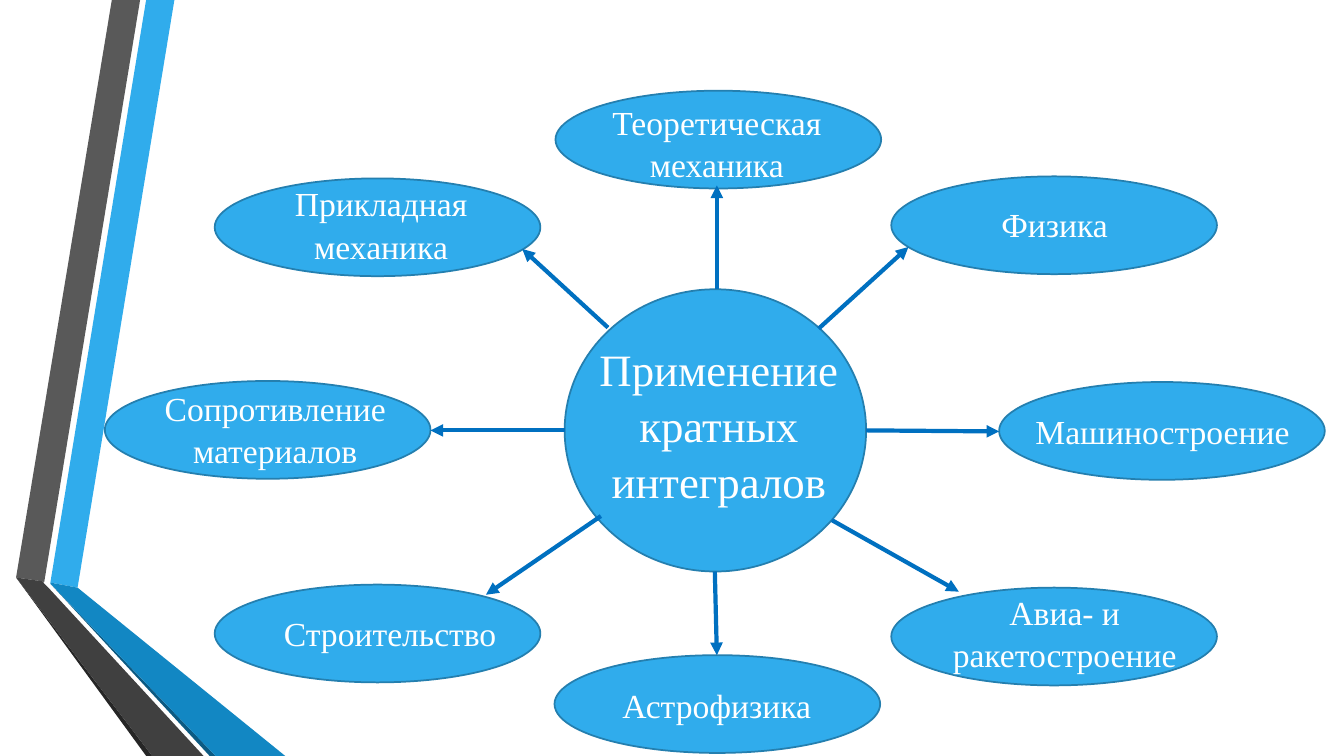
from dataclasses import dataclass

from lxml import etree
from pptx import Presentation
from pptx.dml.color import RGBColor
from pptx.enum.shapes import MSO_CONNECTOR, MSO_SHAPE
from pptx.enum.text import MSO_AUTO_SIZE, PP_ALIGN
from pptx.oxml.ns import qn
from pptx.slide import Slide
from pptx.util import Inches, Pt

STRAIGHT = MSO_CONNECTOR.STRAIGHT
OVAL = MSO_SHAPE.OVAL
CENTER = PP_ALIGN.CENTER
GROW = MSO_AUTO_SIZE.SHAPE_TO_FIT_TEXT

FONT = "Times New Roman"
BLUE, OUTLINE, ARROW, WHITE = "30ACEC", "247FAF", "0070C0", "FFFFFF"
FIELD_SIZE = (3.23, 0.97)
LABEL_WIDTH = 2.9
LABEL_HEIGHTS = {1: 0.5, 2: 0.91}

Point = tuple[float, float]


@dataclass(frozen=True)
class Ribbon:
    color: str
    points: list[Point]


@dataclass(frozen=True)
class Field:
    name: str
    lines: int
    oval: Point
    label: Point
    arrow_start: Point
    arrow_end: Point


RIBBONS = [
    Ribbon(BLUE, [(0.5, 5.78), (0.77, 5.83), (1.73, 0), (1.45, 0)]),
    Ribbon("595959", [(1.39, 0), (1.11, 0), (0.16, 5.73), (0.44, 5.77)]),
    Ribbon("262626", [(0.16, 5.73), (1.45, 7.5), (1.51, 7.5)]),
    Ribbon("0C5A82", [(0.5, 5.79), (2.08, 7.5), (2.14, 7.5)]),
    Ribbon("1287C3", [(0.5, 5.79), (2.14, 7.5), (2.83, 7.5), (0.77, 5.83), (0.5, 5.78)]),
    Ribbon("404040", [(2.02, 7.5), (0.48, 5.83), (0.43, 5.78), (0.44, 5.77),
                      (0.16, 5.73), (1.51, 7.5)]),
]

FIELDS = [
    Field("Теоретическая механика", 2, (5.51, 0.9), (5.66, 0.94), (7.11, 2.87), (7.11, 1.84)),
    Field("Физика", 1, (8.84, 1.75), (9.01, 1.95), (8.12, 3.26), (9.01, 2.45)),
    Field("Машиностроение", 1, (9.91, 3.79), (10.08, 4.01), (8.59, 4.27), (9.91, 4.28)),
    Field("Авиа- и ракетостроение", 2, (8.84, 5.83), (9.11, 5.8), (8.25, 5.16), (9.51, 5.87)),
    Field("Астрофизика", 1, (5.5, 6.5), (5.66, 6.73), (7.09, 5.67), (7.11, 6.5)),
    Field("Строительство", 1, (2.13, 5.8), (2.42, 6.01), (5.96, 5.12), (4.82, 5.9)),
    Field("Сопротивление материалов", 2, (1.04, 3.78), (1.28, 3.78), (5.6, 4.27), (4.27, 4.27)),
    Field("Прикладная механика", 2, (2.13, 1.77), (2.33, 1.75), (6.03, 3.25), (5.18, 2.47)),
]


def rgb(color: str) -> RGBColor:
    return RGBColor.from_string(color)


def draw_ribbon(slide: Slide, ribbon: Ribbon) -> None:
    points = [(Inches(x), Inches(y)) for x, y in ribbon.points]
    builder = slide.shapes.build_freeform(*points[0])
    builder.add_line_segments(points[1:], close=True)
    band = builder.convert_to_shape()
    band.shadow.inherit = False
    band.fill.solid()
    band.fill.fore_color.rgb = rgb(ribbon.color)
    band.line.fill.background()


def draw_oval(slide: Slide, corner: Point, size: Point) -> None:
    oval = slide.shapes.add_shape(OVAL, *map(Inches, corner + size))
    oval.shadow.inherit = False
    oval.fill.solid()
    oval.fill.fore_color.rgb = rgb(BLUE)
    oval.line.color.rgb = rgb(OUTLINE)
    oval.line.width = Pt(1.25)


def draw_label(slide: Slide, text: str, corner: Point, size: Point, points: int) -> None:
    label = slide.shapes.add_textbox(*map(Inches, corner + size))
    frame = label.text_frame
    frame.word_wrap = True
    frame.auto_size = GROW
    paragraph = frame.paragraphs[0]
    paragraph.alignment = CENTER
    paragraph.line_spacing = 1.05
    run = paragraph.add_run()
    run.text = text
    run.font.name = FONT
    run.font.size = Pt(points)
    run.font.color.rgb = rgb(WHITE)


def draw_arrow(slide: Slide, start: Point, end: Point) -> None:
    arrow = slide.shapes.add_connector(STRAIGHT, *map(Inches, start + end))
    arrow.line.color.rgb = rgb(ARROW)
    arrow.line.width = Pt(3)
    etree.SubElement(arrow.line._get_or_add_ln(), qn("a:tailEnd"), type="triangle")
    etree.SubElement(arrow._element.spPr, qn("a:effectLst"))


def main() -> None:
    presentation = Presentation()
    presentation.slide_width = Inches(13.33)
    presentation.slide_height = Inches(7.5)
    slide = presentation.slides.add_slide(presentation.slide_layouts[6])

    for ribbon in RIBBONS:
        draw_ribbon(slide, ribbon)

    draw_oval(slide, (5.6, 2.87), (2.99, 2.8))
    draw_label(slide, "Применение кратных интегралов", (5.84, 3.31), (2.58, 1.72), 32)

    for field in FIELDS:
        draw_oval(slide, field.oval, FIELD_SIZE)
        label_size = (LABEL_WIDTH, LABEL_HEIGHTS[field.lines])
        draw_label(slide, field.name, field.label, label_size, 24)
        draw_arrow(slide, field.arrow_start, field.arrow_end)

    presentation.save("out.pptx")


if __name__ == "__main__":
    main()
